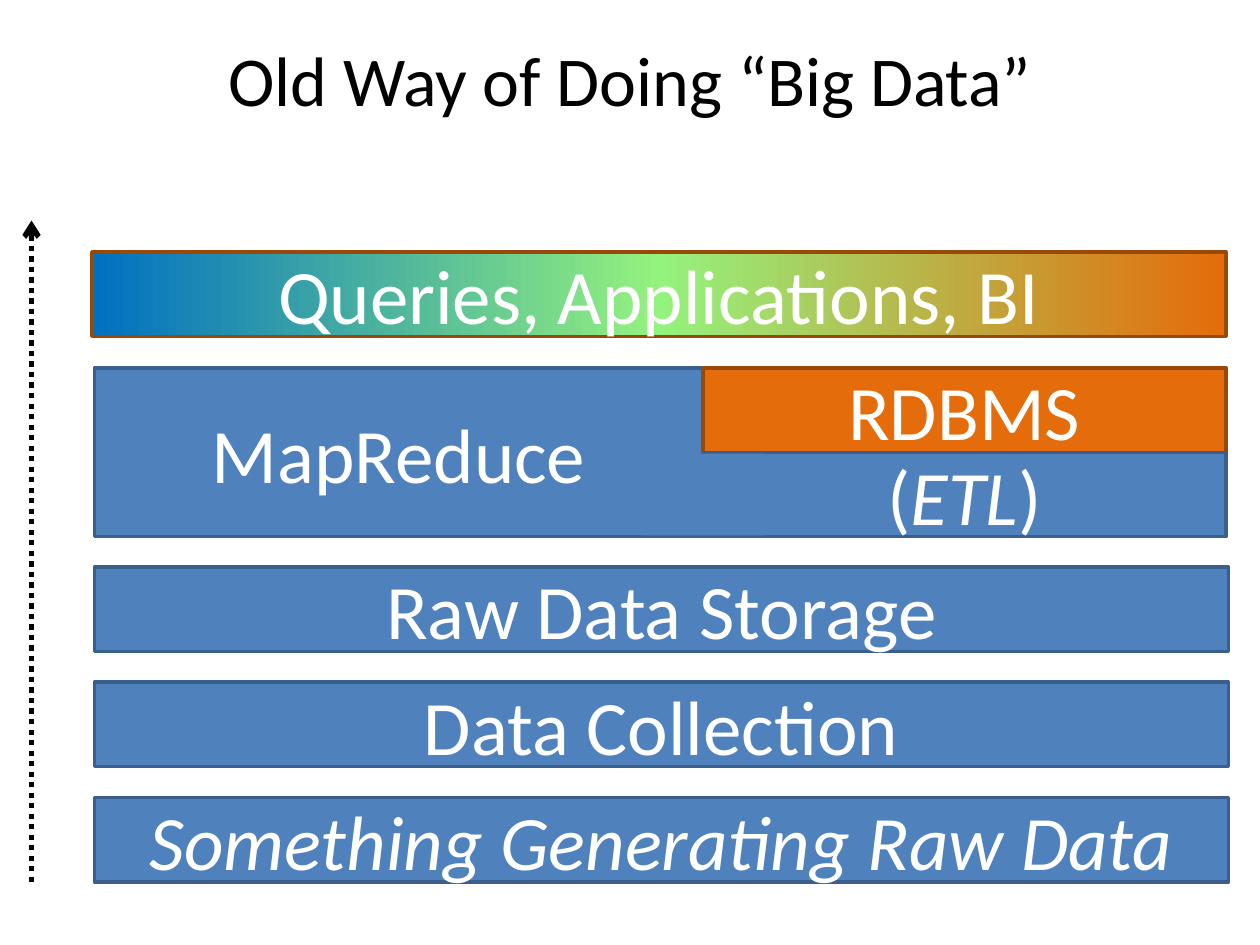
from copy import deepcopy
from pptx import Presentation
from pptx.dml.color import RGBColor
from pptx.enum import dml, shapes, text
from pptx.oxml import ns, xmlchemy as xml
from pptx.util import Inches, Pt

# Content: layers from bottom to top, as (text, italic) runs
TITLE = "Old Way of Doing “Big Data”"
LAYERS = [
    [("Something Generating Raw Data", True)],
    [("Data Collection", False)],
    [("Raw Data Storage", False)],
]
MAP = [("MapReduce", False)]
STORE = [("RDBMS", False)]
ETL = [("(", False), ("ETL", True), (")", False)]
TOP = [("Queries, Applications, BI", False)]

BLUE, NAVY = "4F81BD", "3A5F8C"
ORANGE, BROWN = "E46C0A", "984807"
RAINBOW = ["0070C0", "94F27E", ORANGE]

# Grid
LEFT, WIDE, HIGH = 0.75, 9, 0.67
BASE, STEP = 6.33, 0.915
SPLIT, SIDE, MID = 5.58, 4.15, 2.92


def color(code):
    return RGBColor.from_string(code)


def write(frame, runs, size=44, ink="FFFFFF"):
    frame.word_wrap = True
    frame.vertical_anchor = text.MSO_ANCHOR.MIDDLE
    para = frame.paragraphs[0]
    para.alignment = text.PP_ALIGN.CENTER
    for words, slant in runs:
        run = para.add_run()
        run.text = words
        font = run.font
        font.name, font.size, font.italic = "Calibri", Pt(size), slant
        font.color.rgb = color(ink)


def blend(fill, box, codes):
    fill.gradient()
    fill.gradient_angle = 0
    stops = box.element.spPr.find(".//" + ns.qn("a:gsLst"))
    stops.insert(1, deepcopy(stops[0]))
    for i, (stop, code) in enumerate(zip(fill.gradient_stops, codes)):
        stop.position = i / (len(codes) - 1)
        stop.color.rgb = color(code)


def block(slide, x, y, w, h, runs=(), fill=BLUE, edge=NAVY):
    box = slide.shapes.add_shape(
        shapes.MSO_SHAPE.RECTANGLE, Inches(x), Inches(y), Inches(w), Inches(h))
    box.shadow.inherit = False
    if isinstance(fill, list):
        blend(box.fill, box, fill)
    else:
        box.fill.solid()
        box.fill.fore_color.rgb = color(fill)
    if edge:
        box.line.color.rgb = color(edge)
        box.line.width = Pt(2)
    else:
        box.line.fill.background()
    if runs:
        write(box.text_frame, runs)


def arrow(slide, x, start, end):
    line = slide.shapes.add_connector(
        shapes.MSO_CONNECTOR.STRAIGHT, Inches(x), Inches(start), Inches(x), Inches(end))
    line.line.color.rgb = color("000000")
    line.line.width = Pt(3)
    line.line.dash_style = dml.MSO_LINE.ROUND_DOT
    tip = xml.OxmlElement("a:tailEnd")
    tip.set("type", "arrow")
    props = line.element.spPr
    props.find(ns.qn("a:ln")).append(tip)
    props.append(xml.OxmlElement("a:effectLst"))


def main():
    deck = Presentation()
    deck.slide_width, deck.slide_height = Inches(10), Inches(7.5)
    slide = deck.slides.add_slide(deck.slide_layouts[5])

    # Title
    title = slide.shapes.title
    title.left, title.top = Inches(0.5), Inches(0)
    title.width, title.height = Inches(9), Inches(1.25)
    write(title.text_frame, [(TITLE, False)], size=40, ink="000000")

    # Upward arrow
    arrow(slide, 0.25, 7, 1.75)

    # Processing and query layers
    block(slide, LEFT, MID, SPLIT - LEFT, 2 * HIGH, MAP)
    block(slide, SPLIT, MID, SIDE, HIGH, STORE, fill=ORANGE, edge=BROWN)
    block(slide, 0.73, 2, WIDE, HIGH, TOP, fill=RAINBOW, edge=BROWN)

    # Lower layers
    for i, runs in enumerate(LAYERS):
        block(slide, LEFT, BASE - i * STEP, WIDE, HIGH, runs)

    # ETL, with a patch that joins it to MapReduce
    block(slide, SPLIT, MID + HIGH, SIDE, HIGH, ETL)
    block(slide, 5.09, 3.6, 0.98, 0.65, edge=None)

    deck.save("out.pptx")


if __name__ == "__main__":
    main()
